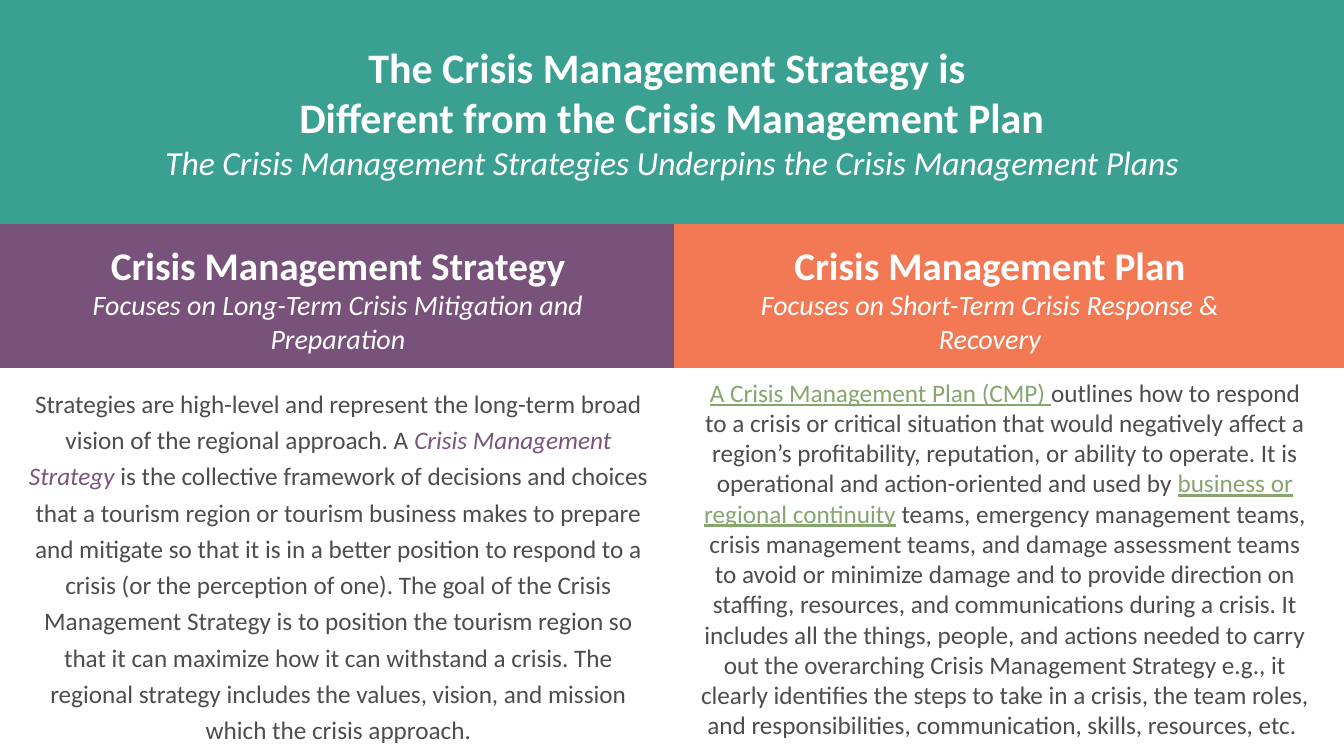
from dataclasses import dataclass

from pptx import Presentation
from pptx import util as u
from pptx.dml.color import RGBColor
from pptx.enum import shapes, text

PX = 12192000 / 1344


@dataclass(frozen=True)
class Theme:
    """Colours, font and type sizes of the slide."""
    font: str = "Calibri"
    teal: str = "3AA091"
    purple: str = "79527B"
    orange: str = "F27954"
    white: str = "FFFFFF"
    ink: str = "4D4D4D"
    accent: str = "7A547C"
    link: str = "87A66E"
    title: int = 30
    subtitle: int = 24
    heading: int = 28
    tagline: int = 20
    body: int = 18


T = Theme()


def px(n):
    """Turn pixels into EMU."""
    return u.Emu(round(n * PX))


def add_run(p, words, size, color=T.ink, bold=False, italic=False, underline=False):
    """Add one styled run to a paragraph."""
    r = p.add_run()
    r.text = words
    f = r.font
    f.name, f.size, f.color.rgb = T.font, u.Pt(size), RGBColor.from_string(color)
    f.bold, f.italic, f.underline = bold, italic, underline


def add_band(s, box, color):
    """Draw a plain filled rectangle."""
    sp = s.shapes.add_shape(shapes.MSO_SHAPE.RECTANGLE, *map(px, box))
    sp.shadow.inherit = False
    sp.fill.solid()
    sp.fill.fore_color.rgb = RGBColor.from_string(color)
    sp.line.fill.background()
    return sp


def fill_text(sp, paragraphs, anchor=text.MSO_ANCHOR.TOP, spacing=1.0):
    """Write centred paragraphs, each a list of run settings."""
    tf = sp.text_frame
    tf.word_wrap = True
    tf.vertical_anchor = anchor
    for i, runs in enumerate(paragraphs):
        p = tf.add_paragraph() if i else tf.paragraphs[0]
        p.alignment = text.PP_ALIGN.CENTER
        p.line_spacing = spacing
        for run in runs:
            add_run(p, **run)


def add_title(s, box):
    """Place the title band with its two title lines and subtitle."""
    lines = ["The Crisis Management Strategy is ",
             "Different from the Crisis Management Plan"]
    paragraphs = [[dict(words=w, size=T.title, color=T.white, bold=True)] for w in lines]
    paragraphs.append([dict(
        words="The Crisis Management Strategies Underpins the Crisis Management Plans",
        size=T.subtitle, color=T.white, italic=True)])
    fill_text(add_band(s, box, T.teal), paragraphs, text.MSO_ANCHOR.MIDDLE)


def add_header(s, box, color, heading, tagline, inset, width):
    """Place a coloured column header with heading and tagline."""
    x, y, w, h = box
    add_band(s, box, color)
    sp = s.shapes.add_textbox(px(x + inset), px(y + 183), px(width), px(h - 191))
    fill_text(sp, [
        [dict(words=heading, size=T.heading, color=T.white, bold=True)],
        [dict(words=tagline, size=T.tagline, color=T.white, italic=True)],
    ], text.MSO_ANCHOR.MIDDLE)


def add_body(sp, runs, spacing=1.0):
    """Write one column of body text into its shape."""
    fill_text(sp, [[dict(size=T.body, **run) for run in runs]], spacing=spacing)


def main():
    """Build and save the slide."""
    prs = Presentation()
    prs.slide_width, prs.slide_height = px(1344), px(756)
    s = prs.slides.add_slide(prs.slide_layouts[6])

    add_header(s, (0, 53, 674, 315), T.purple, "Crisis Management Strategy",
               "Focuses on Long-Term Crisis Mitigation and Preparation", 40, 596)
    add_header(s, (674, 53, 670, 315), T.orange, "Crisis Management Plan",
               "Focuses on Short-Term Crisis Response & Recovery", 43, 546)
    add_body(add_band(s, (13, 377, 651, 378), T.white), [
        dict(words="Strategies are high-level and represent the long-term broad vision "
                   "of the regional approach. A "),
        dict(words="Crisis Management Strategy ", color=T.accent, italic=True),
        dict(words="is the collective framework of decisions and choices that a tourism "
                   "region or tourism business makes to prepare and mitigate so that it is "
                   "in a better position to respond to a crisis (or the perception of one). "
                   "The goal of the Crisis Management Strategy is to position the tourism "
                   "region so that it can maximize how it can withstand a crisis. The "
                   "regional strategy includes the values, vision, and mission which the "
                   "crisis approach."),
    ], spacing=1.2)
    add_body(s.shapes.add_textbox(*map(px, (687, 372, 636, 185))), [
        dict(words="A Crisis Management Plan (CMP) ", color=T.link, underline=True),
        dict(words="outlines how to respond to a crisis or critical situation that would "
                   "negatively affect a region’s profitability, reputation, or ability to "
                   "operate. It is operational and action-oriented and used by "),
        dict(words="business or regional continuity", color=T.link, underline=True),
        dict(words=" teams, emergency management teams, crisis management teams, and damage "
                   "assessment teams to avoid or minimize damage and to provide direction on "
                   "staffing, resources, and communications during a crisis. It includes all "
                   "the things, people, and actions needed to carry out the overarching "
                   "Crisis Management Strategy e.g., it clearly identifies the steps to take "
                   "in a crisis, the team roles, and responsibilities, communication, "
                   "skills, resources, etc. "),
    ])
    add_title(s, (0, 0, 1344, 224))
    prs.save("out.pptx")


if __name__ == "__main__":
    main()
